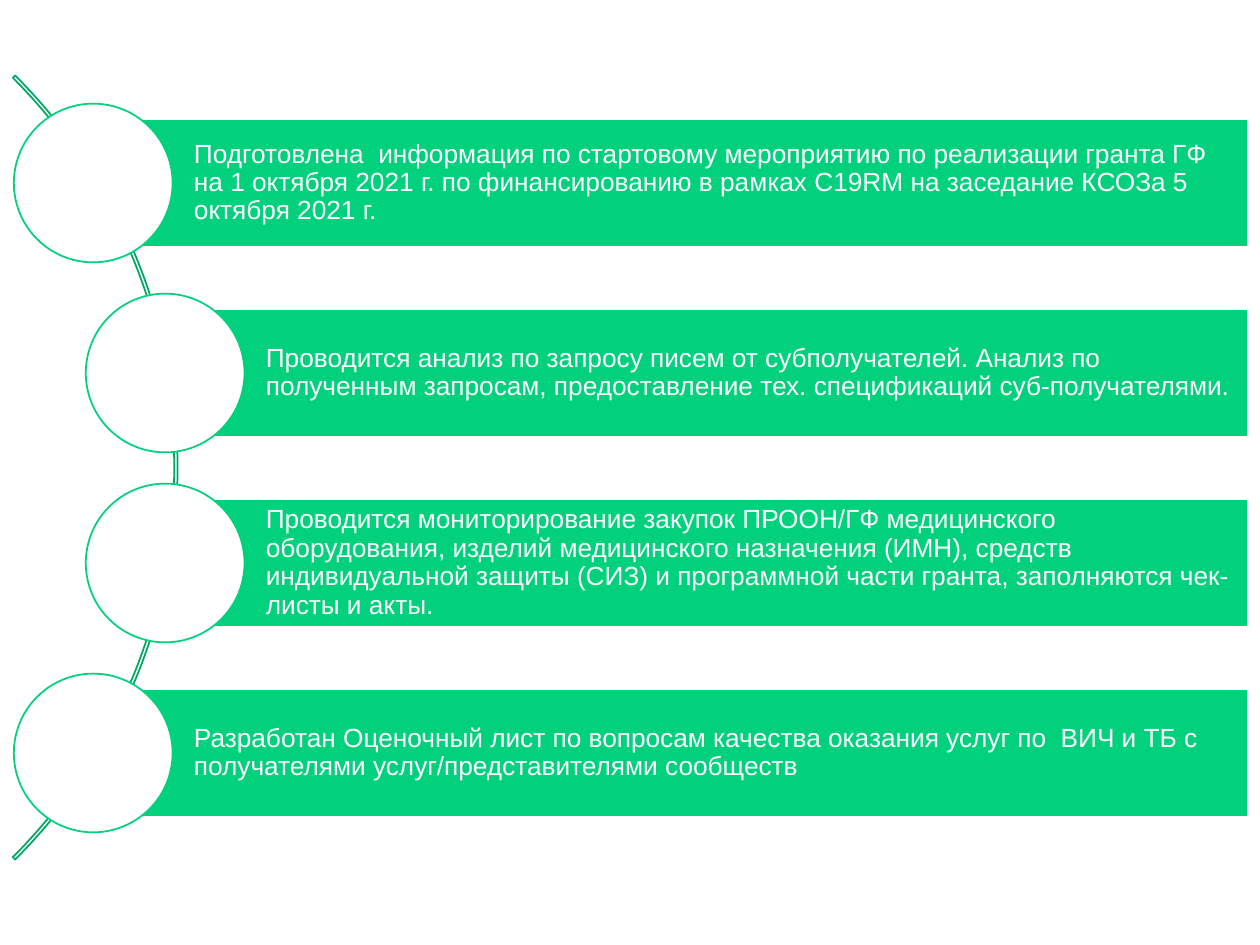
"""Build a slide with four green bars and circles set along an arc."""
from pptx import Presentation
from pptx.dml.color import RGBColor
from pptx.enum.shapes import MSO_SHAPE
from pptx.enum.text import MSO_ANCHOR, PP_ALIGN
from pptx.util import Cm, Pt

HUES = {"green": "01D17D", "dark": "01A764", "white": "FFFFFF"}
TOP, STEP, HIGH, RIGHT = 2.41, 3.83, 2.56, 25.16
SIZE = 3.2
ROWS = [
    (1.88, "Подготовлена  информация по стартовому мероприятию по реализации гранта ГФ "
           "на 1 октября 2021 г. по финансированию в рамках С19RM на заседание КСОЗа "
           "5 октября 2021 г."),
    (3.33, "Проводится анализ по запросу писем от субполучателей. Анализ по полученным "
           "запросам, предоставление тех. спецификаций суб-получателями."),
    (3.33, "Проводится мониторирование закупок ПРООН/ГФ медицинского оборудования, "
           "изделий медицинского назначения (ИМН), средств индивидуальной защиты (СИЗ) "
           "и программной части гранта, заполняются чек-листы и акты."),
    (1.88, "Разработан Оценочный лист по вопросам качества оказания услуг по  ВИЧ и ТБ "
           "с получателями услуг/представителями сообществ"),
]


def hue(name):
    """Return the named colour."""
    return RGBColor.from_string(HUES[name])


def add_form(slide, kind, box, fill, line):
    """Add a flat shape; a fill of None leaves it hollow."""
    form = slide.shapes.add_shape(kind, *[Cm(n) for n in box])
    form.shadow.inherit = False
    if fill:
        form.fill.solid()
        form.fill.fore_color.rgb = hue(fill)
    else:
        form.fill.background()
    form.line.color.rgb = hue(line)
    form.line.width = Pt(1)
    return form


def add_arc(slide):
    """Add the thin arc that links the circles."""
    arc = add_form(slide, MSO_SHAPE.BLOCK_ARC, (-18.77, -1.75, 22.35, 22.35), None, "dark")
    for i, part in enumerate((189, 27, 0.003)):
        arc.adjustments[i] = part


def add_bar(slide, left, top, text):
    """Add a green bar with its text."""
    box = (left, top, RIGHT - left, HIGH)
    frame = add_form(slide, MSO_SHAPE.RECTANGLE, box, "green", "white").text_frame
    frame.word_wrap = True
    frame.vertical_anchor = MSO_ANCHOR.MIDDLE
    frame.margin_left = Cm(2.03)
    frame.margin_right = frame.margin_top = frame.margin_bottom = Cm(0.1)
    para = frame.paragraphs[0]
    para.alignment = PP_ALIGN.LEFT
    para.line_spacing = 0.9
    run = para.add_run()
    run.text = text
    run.font.name = "Arial"
    run.font.size = Pt(15)
    run.font.color.rgb = hue("white")


def add_disc(slide, left, top):
    """Add a white circle centred on the left edge of a bar."""
    box = (left - SIZE / 2, top + (HIGH - SIZE) / 2, SIZE, SIZE)
    add_form(slide, MSO_SHAPE.OVAL, box, "white", "green")


def main():
    """Build and save the slide."""
    deck = Presentation()
    deck.slide_width, deck.slide_height = Cm(25.4), Cm(19.05)
    slide = deck.slides.add_slide(deck.slide_layouts[6])
    add_arc(slide)
    for i, (left, text) in enumerate(ROWS):
        top = TOP + i * STEP
        add_bar(slide, left, top, text)
        add_disc(slide, left, top)
    deck.save("out.pptx")


if __name__ == "__main__":
    main()
